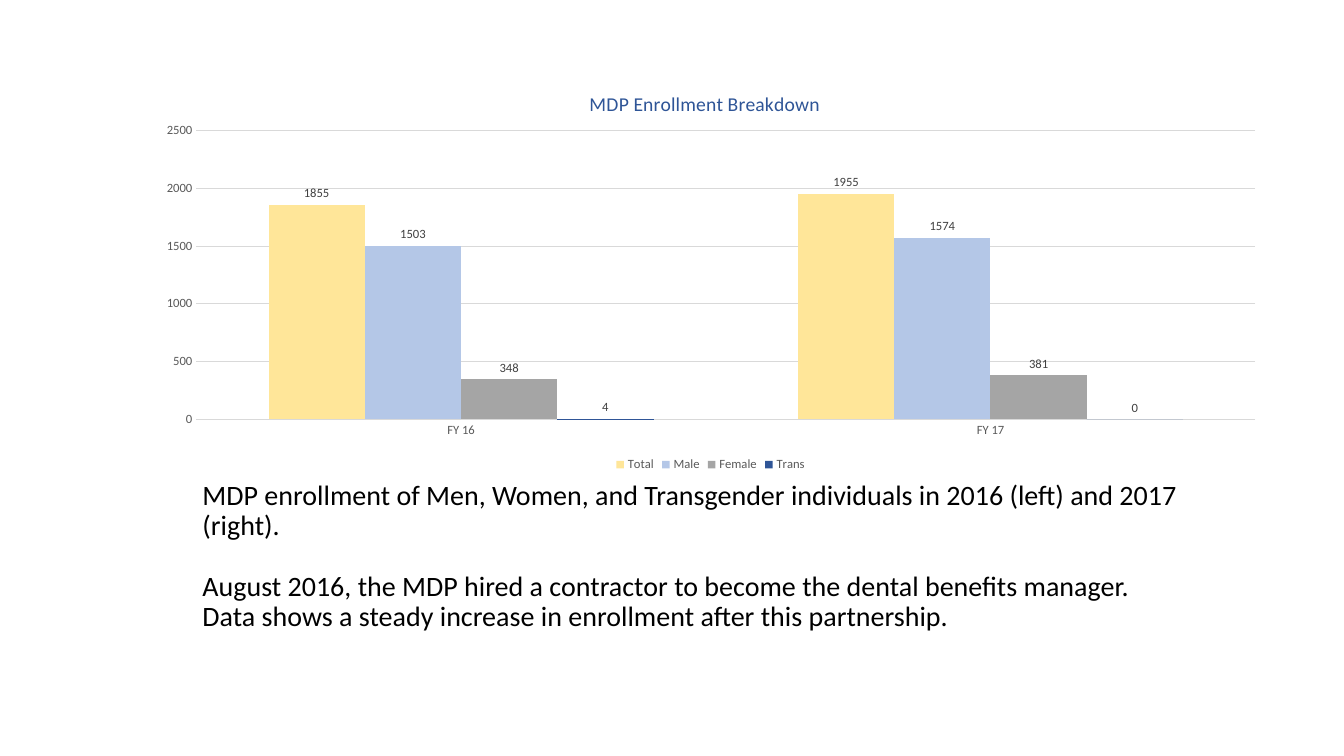
"""Builds the slide on dental plan enrollment by gender."""
from pptx import Presentation
from pptx.chart.data import CategoryChartData
from pptx.dml.color import RGBColor
from pptx.enum.chart import XL_CHART_TYPE, XL_LABEL_POSITION, XL_LEGEND_POSITION, XL_TICK_MARK
from pptx.oxml import parse_xml
from pptx.oxml.ns import nsdecls, qn
from pptx.util import Pt

COLORS = {
    "text": "000000", "title": "2F5597", "axis": "595959", "label": "404040", "grid": "D9D9D9",
    "Total": "FFE699", "Male": "B4C7E7", "Female": "A5A5A5", "Trans": "2F5597",
}
YEARS = ["FY 16", "FY 17"]
COUNTS = {"Total": (1855, 1955), "Male": (1503, 1574), "Female": (348, 381), "Trans": (4, 0)}
NOTES = [
    "MDP enrollment of Men, Women, and Transgender individuals in 2016 (left) and 2017 (right).",
    "August 2016, the MDP hired a contractor to become the dental benefits manager. "
    "Data shows a steady increase in enrollment after this partnership.",
]


class Deck:
    def __init__(self, face, colors):
        self.face = face
        self.colors = colors
        self.show = Presentation()
        self.show.slide_width, self.show.slide_height = Pt(960), Pt(540)
        self.slide = self.show.slides.add_slide(self.show.slide_layouts[6])

    def color(self, name):
        return RGBColor.from_string(self.colors[name])

    def style(self, font, size, color):
        font.name, font.size, font.bold = self.face, Pt(size), False
        font.color.rgb = self.color(color)

    def place(self, part, index, **sizes):
        for old in part.findall(qn("c:layout")):
            part.remove(old)
        target = '<c:layoutTarget val="inner"/>' if "w" in sizes else ""
        modes = "".join(f'<c:{key}Mode val="edge"/>' for key in "xy")
        values = "".join(f'<c:{key} val="{size}"/>' for key, size in sizes.items())
        part.insert(index, parse_xml(
            f'<c:layout {nsdecls("c")}><c:manualLayout>{target}{modes}{values}'
            "</c:manualLayout></c:layout>"))

    def text(self, left, top, width, height, lines, size, gap):
        frame = self.slide.shapes.add_textbox(Pt(left), Pt(top), Pt(width), Pt(height)).text_frame
        frame.word_wrap = True
        frame.text = "\n".join(lines)
        for index, para in enumerate(frame.paragraphs):
            para.line_spacing = 0.9
            if index:
                para.space_before = Pt(gap)
            for run in para.runs:
                self.style(run.font, size, "text")

    def chart(self, left, top, width, height, title, names, series):
        data = CategoryChartData()
        data.categories = names
        for name, values in series.items():
            data.add_series(name, values)
        chart = self.slide.shapes.add_chart(
            XL_CHART_TYPE.COLUMN_CLUSTERED, Pt(left), Pt(top), Pt(width), Pt(height), data).chart
        self.style(chart.font, 10, "text")
        self.title(chart, title)
        self.axes(chart)
        self.bars(chart)
        chart.has_legend = True
        chart.legend.position = XL_LEGEND_POSITION.BOTTOM
        chart.legend.include_in_layout = False
        self.style(chart.legend.font, 9, "axis")

    def title(self, chart, title):
        chart.has_title = True
        frame = chart.chart_title.text_frame
        frame.text = title
        self.style(frame.paragraphs[0].runs[0].font, 14, "title")
        self.place(chart.chart_title._element, 1, x=0.39, y=0.05)

    def axes(self, chart):
        for axis in (chart.category_axis, chart.value_axis):
            axis.major_tick_mark = axis.minor_tick_mark = XL_TICK_MARK.NONE
            axis.format.line.fill.background()
            self.style(axis.tick_labels.font, 9, "axis")
        scale = chart.value_axis
        scale.minimum_scale, scale.maximum_scale, scale.major_unit = 0, 2500, 500
        scale.has_major_gridlines = True
        line = scale.major_gridlines.format.line
        line.width = Pt(0.75)
        line.color.rgb = self.color("grid")
        self.place(chart._chartSpace.chart.plotArea, 0, x=0.046, y=0.158, w=0.935, h=0.704)

    def bars(self, chart):
        plot = chart.plots[0]
        plot.gap_width, plot.overlap, plot.vary_by_categories = 150, 0, False
        for bar in plot.series:
            bar.invert_if_negative = False
            bar.format.fill.solid()
            bar.format.fill.fore_color.rgb = self.color(bar.name)
            labels = bar.data_labels
            labels.show_value = True
            labels.position = XL_LABEL_POSITION.OUTSIDE_END
            self.style(labels.font, 9, "label")


def main():
    deck = Deck("Calibri", COLORS)
    deck.text(137.5, 340, 713, 124, NOTES, 20, 22)
    deck.chart(103, 47, 809, 293, "MDP Enrollment Breakdown", YEARS, COUNTS)
    deck.show.save("out.pptx")


if __name__ == "__main__":
    main()
